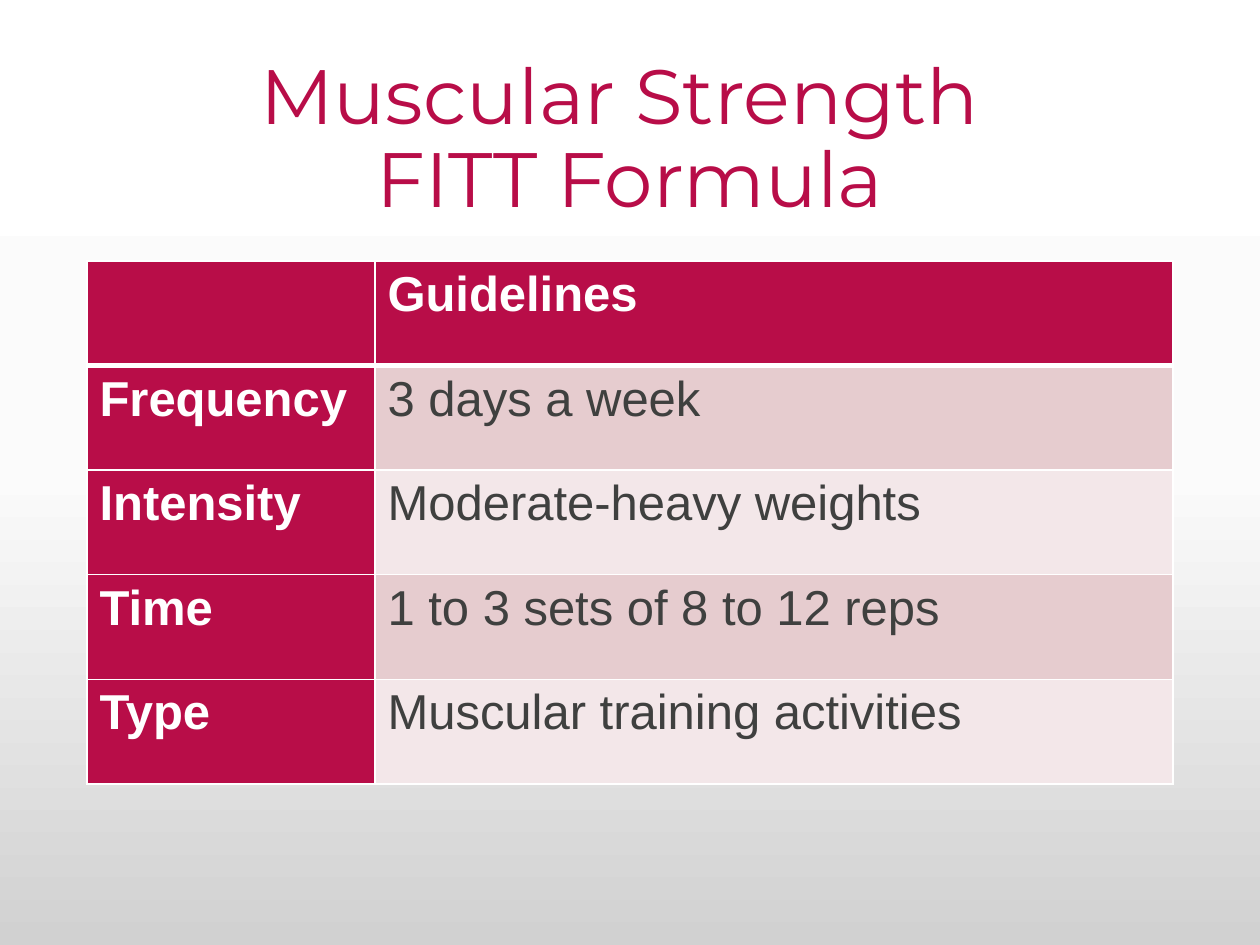
from copy import deepcopy

from lxml import etree
from pptx import Presentation
from pptx.dml.color import RGBColor
from pptx.enum.text import MSO_ANCHOR, MSO_AUTO_SIZE, PP_ALIGN
from pptx.oxml.ns import qn
from pptx.util import Pt

TITLE = "Muscular Strength \vFITT Formula"
ROWS = [
    ("", "Guidelines"),
    ("Frequency", "3 days a week"),
    ("Intensity", "Moderate-heavy weights"),
    ("Time", "1 to 3 sets of 8 to 12 reps"),
    ("Type", "Muscular training activities"),
]
BACKGROUND_STOPS = [(0, "FFFFFF"), (50, "FBFBFB"), (100, "D1D1D1")]
CRIMSON, WHITE, CHARCOAL = "B80D48", "FFFFFF", "3F403F"
BANDS = ["F3E7E9", "E6CCCF"]

PX = 914400 // 126
SLIDE_SIZE = (1260, 945)
TITLE_BOX = (87, 50, 1086, 183)
TABLE_BOX = (87, 261, 1086, 523)
COLUMN_WIDTHS = [288, 798]


def px(*lengths):
    return [length * PX for length in lengths]


def color(hex_string):
    return RGBColor.from_string(hex_string)


def style_font(font, name, size, hex_string, bold=False):
    font.name, font.size, font.bold = name, Pt(size), bold
    font.color.rgb = color(hex_string)


def paint_background(slide):
    fill = slide.background.fill
    fill.gradient()
    fill.gradient_angle = 270
    stop_list = slide.element.find(".//" + qn("a:gsLst"))
    stop_list.insert(1, deepcopy(stop_list[0]))
    for stop, (percent, hex_string) in zip(fill.gradient_stops, BACKGROUND_STOPS):
        stop.color.rgb = color(hex_string)
        stop.position = percent / 100


def add_title(slide):
    title = slide.shapes.title
    title.left, title.top, title.width, title.height = px(*TITLE_BOX)
    frame = title.text_frame
    frame.text = TITLE
    frame.word_wrap = True
    frame.auto_size = MSO_AUTO_SIZE.NONE
    frame.vertical_anchor = MSO_ANCHOR.MIDDLE
    paragraph = frame.paragraphs[0]
    paragraph.alignment = PP_ALIGN.CENTER
    paragraph.line_spacing = 0.9
    for run in paragraph.runs:
        style_font(run.font, "Montserrat", 44, CRIMSON)


def add_borders(cell, row):
    """White cell edges, thicker between the header and the body."""
    properties = cell._tc.get_or_add_tcPr()
    thick_side = {0: "lnB", 1: "lnT"}.get(row)
    for side in ("lnL", "lnR", "lnT", "lnB"):
        points = 3 if side == thick_side else 1
        line = etree.SubElement(properties, qn("a:" + side), w=str(Pt(points)))
        fill = etree.SubElement(line, qn("a:solidFill"))
        etree.SubElement(fill, qn("a:srgbClr"), val=WHITE)


def add_guidelines_table(slide):
    table = slide.shapes.add_table(len(ROWS), len(COLUMN_WIDTHS), *px(*TABLE_BOX)).table
    for column, width in zip(table.columns, px(*COLUMN_WIDTHS)):
        column.width = width
    for row, texts in enumerate(ROWS):
        for column, text in enumerate(texts):
            cell = table.cell(row, column)
            heading = row == 0 or column == 0
            add_borders(cell, row)
            cell.fill.solid()
            cell.fill.fore_color.rgb = color(CRIMSON if heading else BANDS[row % 2])
            cell.text = text
            for run in cell.text_frame.paragraphs[0].runs:
                style_font(run.font, "Arial", 28, WHITE if heading else CHARCOAL, heading)


def main():
    presentation = Presentation()
    presentation.slide_width, presentation.slide_height = px(*SLIDE_SIZE)
    slide = presentation.slides.add_slide(presentation.slide_layouts[5])
    paint_background(slide)
    add_title(slide)
    add_guidelines_table(slide)
    presentation.save("out.pptx")


if __name__ == "__main__":
    main()
